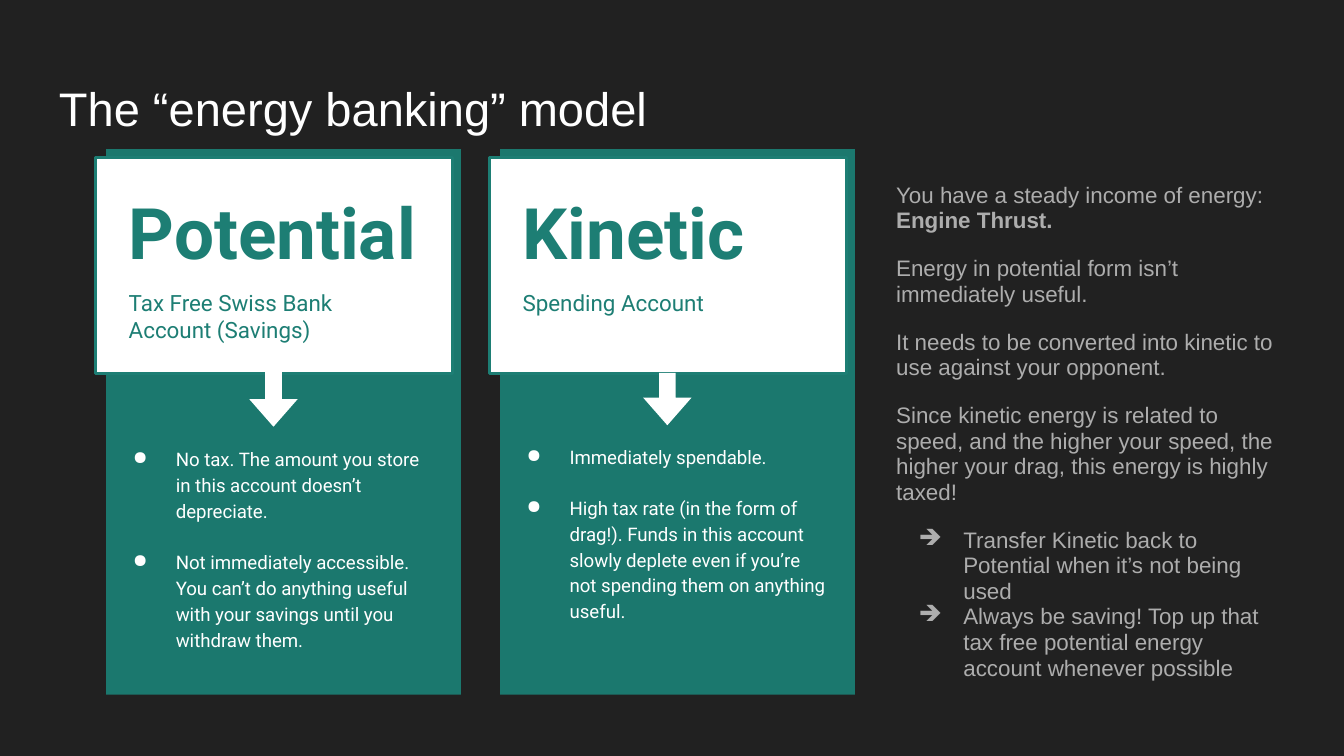
from lxml.etree import SubElement
from pptx import Presentation
from pptx.dml.color import RGBColor
from pptx.enum.shapes import MSO_SHAPE
from pptx.enum.text import MSO_ANCHOR
from pptx.oxml.ns import qn
from pptx.util import Pt

BACKGROUND = "212121"
WHITE = "FFFFFF"
PANEL = "1B786E"
TEAL = "1D7E74"
GREY = "ADADAD"
INSET = 7.2
PANEL_LEFT = 56.9
PANEL_STEP = 211

ACCOUNTS = [
    {
        "title": "Potential",
        "subtitle": "Tax Free Swiss Bank Account (Savings)",
        "arrow_length": 29.5,
        "points_top": 231.1,
        "points": [
            "No tax. The amount you store in this account doesn’t depreciate.",
            "Not immediately accessible. You can’t do anything useful with your "
            "savings until you withdraw them.",
        ],
    },
    {
        "title": "Kinetic",
        "subtitle": "Spending Account",
        "arrow_length": 28,
        "points_top": 229.7,
        "points": [
            "Immediately spendable.",
            "High tax rate (in the form of drag!). Funds in this account slowly "
            "deplete even if you’re not spending them on anything useful.",
        ],
    },
]
EXPLANATION = [
    [("You have a steady income of energy: ", False), ("Engine Thrust.", True)],
    [("Energy in potential form isn’t immediately useful.", False)],
    [("It needs to be converted into kinetic to use against your opponent.", False)],
    [("Since kinetic energy is related to speed, and the higher your speed, "
      "the higher your drag, this energy is highly taxed!", False)],
]
ADVICE = [
    "Transfer Kinetic back to Potential when it’s not being used",
    "Always be saving! Top up that tax free potential energy account "
    "whenever possible",
]


def rgb(value):
    return RGBColor.from_string(value)


def add_box(shapes, kind, left, top, width, height, fill, line=None):
    sp = shapes.add_shape(kind, Pt(left), Pt(top), Pt(width), Pt(height))
    sp.shadow.inherit = False
    sp.fill.solid()
    sp.fill.fore_color.rgb = rgb(fill)
    if line:
        sp.line.color.rgb = rgb(line)
        sp.line.width = Pt(1.5)
    else:
        sp.line.fill.background()
    return sp


def add_text_frame(shapes, left, top, width, height):
    tf = shapes.add_textbox(Pt(left), Pt(top), Pt(width), Pt(height)).text_frame
    tf.word_wrap = True
    tf.vertical_anchor = MSO_ANCHOR.TOP
    tf.margin_left = tf.margin_right = Pt(INSET)
    tf.margin_top = tf.margin_bottom = Pt(INSET)
    return tf


def add_paragraph(tf, spacing=1, before=0):
    """Use the empty first paragraph of the frame, or append one with a gap."""
    first = tf.paragraphs[0]
    if not first.runs:
        p = first
    else:
        p = tf.add_paragraph()
        p.space_before = Pt(before)
    p.line_spacing = spacing
    return p


def add_run(p, text, size, color, font, bold=False):
    r = p.add_run()
    r.text = text
    r.font.size = Pt(size)
    r.font.name = font
    r.font.bold = bold
    r.font.color.rgb = rgb(color)


def set_bullet(p, char, color, hanging):
    pPr = p._p.get_or_add_pPr()
    pPr.set("marL", str(Pt(36)))
    pPr.set("indent", str(-Pt(hanging)))
    SubElement(SubElement(pPr, qn("a:buClr")), qn("a:srgbClr"), val=color)
    SubElement(pPr, qn("a:buChar"), char=char)


def add_account(s, left, account):
    shapes = s.shapes.add_group_shape().shapes
    card_left = left - 5.8
    add_box(shapes, MSO_SHAPE.RECTANGLE, left, 79.9, 190.1, 292.3, PANEL)
    add_box(shapes, MSO_SHAPE.RECTANGLE, card_left, 84.3, 191.5, 115.9, WHITE, TEAL)

    tf = add_text_frame(shapes, left + 5, 147.6, 169.9, 43.9)
    add_run(add_paragraph(tf), account["subtitle"], 12, TEAL, "Roboto")
    tf = add_text_frame(shapes, left + 5, 93.6, 169.9, 48.2)
    add_run(add_paragraph(tf), account["title"], 38, TEAL, "Roboto", True)

    length = account["arrow_length"]
    arrow = add_box(shapes, MSO_SHAPE.RIGHT_ARROW, left + 89.6 - length / 2,
                    200.9, length, 25.9, WHITE)
    arrow.adjustments[0] = 0.342
    arrow.adjustments[1] = 0.57
    arrow.rotation = 90

    tf = add_text_frame(shapes, card_left, account["points_top"], 190.1, 134.6)
    for point in account["points"]:
        p = add_paragraph(tf, 1.15, 13.8)
        set_bullet(p, "●", WHITE, 23)
        add_run(p, point, 10, WHITE, "Roboto")


def add_explanation(s):
    tf = add_text_frame(s.shapes, 473, 90.7, 222.5, 289.4)
    for runs in EXPLANATION:
        p = add_paragraph(tf, 0.95, 12)
        for text, bold in runs:
            add_run(p, text, 12, GREY, "Arial", bold)
    for i, text in enumerate(ADVICE):
        p = add_paragraph(tf, 0.95, 0 if i else 12)
        set_bullet(p, "➔", GREY, 24)
        add_run(p, text, 12, GREY, "Arial")


def main():
    prs = Presentation()
    prs.slide_width, prs.slide_height = Pt(720), Pt(405)
    s = prs.slides.add_slide(prs.slide_layouts[6])
    s.background.fill.solid()
    s.background.fill.fore_color.rgb = rgb(BACKGROUND)

    tf = add_text_frame(s.shapes, 24.5, 35.3, 671, 45.4)
    add_run(add_paragraph(tf), "The “energy banking” model", 25.2, WHITE, "Arial")
    for i, account in enumerate(ACCOUNTS):
        add_account(s, PANEL_LEFT + i * PANEL_STEP, account)
    add_explanation(s)
    prs.save("out.pptx")


if __name__ == "__main__":
    main()
